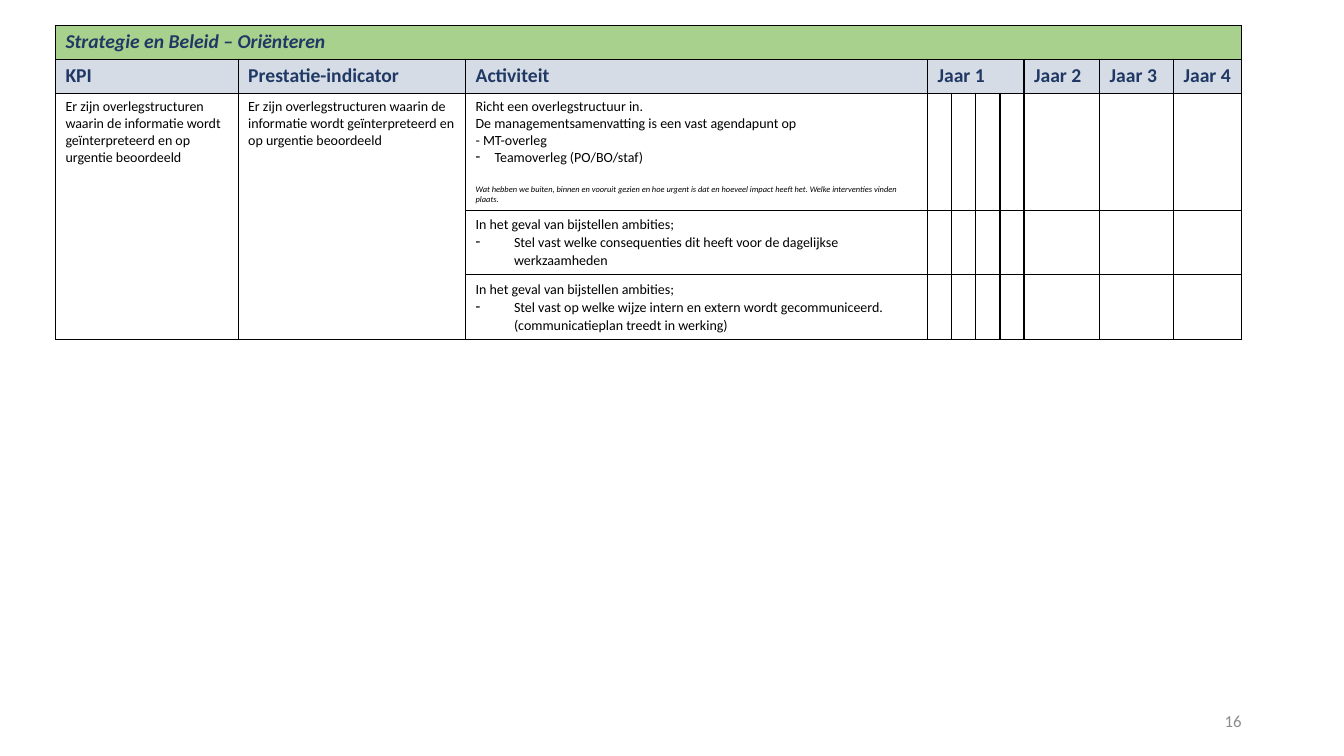
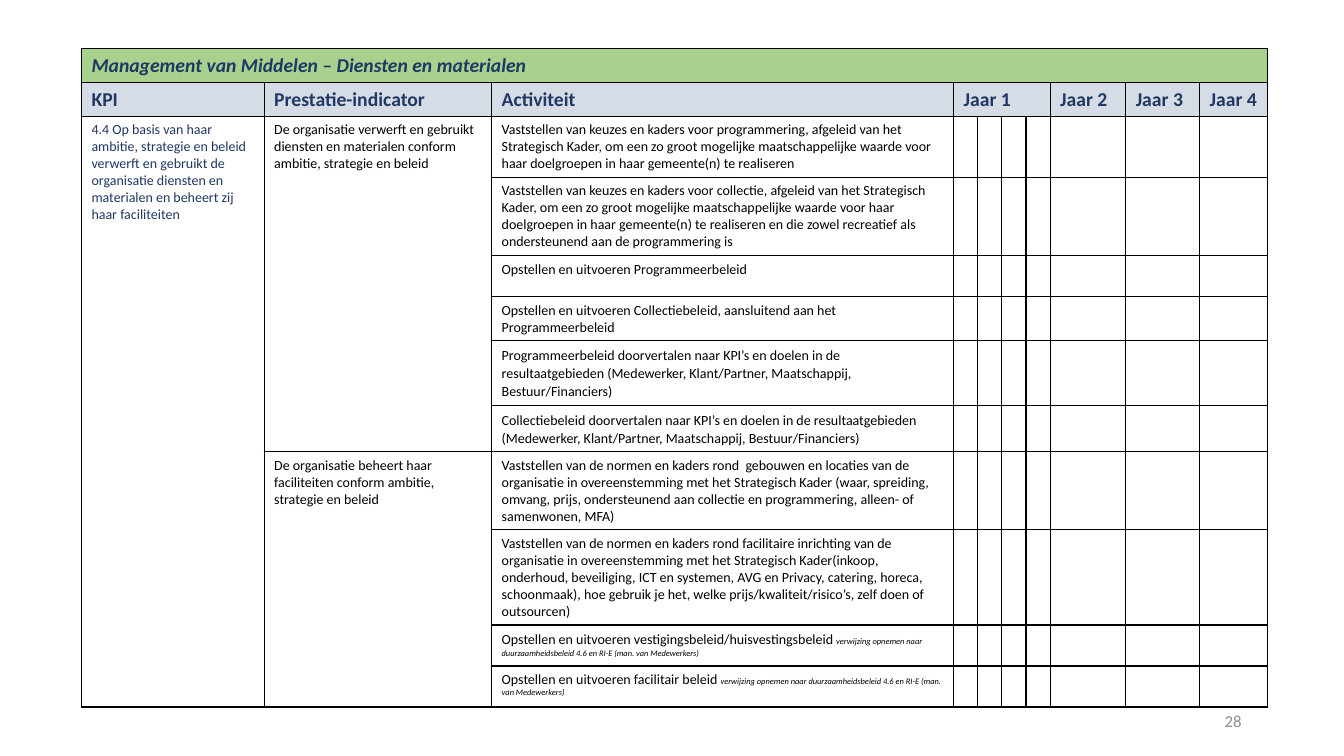
from dataclasses import dataclass

from lxml.etree import SubElement
from pptx import Presentation
from pptx.dml.color import RGBColor
from pptx.enum.text import MSO_ANCHOR as Anchor, PP_ALIGN as Align
from pptx.oxml import parse_xml
from pptx.oxml.ns import nsdecls, qn
from pptx.util import Pt


@dataclass(frozen=True)
class Theme:
    font: str = "Calibri"
    navy: str = "203864"
    black: str = "000000"
    gray: str = "8C8C8C"
    green: str = "A9D18E"
    pale_blue: str = "D6DCE5"
    heading_size: float = 14
    page_size: float = 12
    body_size: float = 10
    note_size: float = 6
    border_width: float = 1
    loose_spacing: float = 1.07


@dataclass(frozen=True)
class Line:
    text: str = ""
    note: str = ""
    indent: float = 0
    loose: bool = False
    before: float = 0


@dataclass(frozen=True)
class Activity:
    height: float
    lines: tuple[Line, ...]


@dataclass(frozen=True)
class Indicator:
    text: str
    activities: tuple[Activity, ...]


@dataclass(frozen=True)
class Plan:
    left: float
    top: float
    title: str
    kpi: str
    kpi_color: str
    indicators: tuple[Indicator, ...]
    page_number: int


THEME = Theme()
HEADER_HEIGHT = 24.3
QUARTERS = 4
COLUMN_WIDTHS = (130.5, 162.5, 330, *[17.2] * QUARTERS, 54, 52.8, 48.4)
HEADERS = {0: "KPI", 1: "Prestatie-indicator", 2: "Activiteit", 3: "Jaar 1",
           7: "Jaar 2", 8: "Jaar 3", 9: "Jaar 4"}


def activity(height: float, text: str, note: str = "", loose: bool = False) -> Activity:
    return Activity(height, (Line(text, note, loose=loose),))


def adjustment(task: str) -> Activity:
    return Activity(46.2, (
        Line("In het geval van bijstellen ambities;", loose=True),
        Line(task, indent=27.4, loose=True),
    ))


OVERLEG = "Er zijn overlegstructuren waarin de informatie wordt geïnterpreteerd en op urgentie beoordeeld"
VERWIJZING = "verwijzing opnemen naar duurzaamheidsbeleid 4.6 en RI-E (man. van Medewerkers)"
RESULTAATGEBIEDEN = (
    "doorvertalen naar KPI’s en doelen in de resultaatgebieden "
    "(Medewerker, Klant/Partner, Maatschappij, Bestuur/Financiers)"
)

PLANS = (
    Plan(39.6, 18, "Strategie en Beleid – Oriënteren", OVERLEG, THEME.black, (
        Indicator(OVERLEG, (
            Activity(83.6, (
                Line("Richt een overlegstructuur in."),
                Line("De managementsamenvatting is een vast agendapunt op"),
                Line("- MT-overleg"),
                Line("Teamoverleg (PO/BO/staf)", indent=13.5),
                Line(note="Wat hebben we buiten, binnen en vooruit gezien en hoe urgent is dat en "
                          "hoeveel impact heeft het. Welke interventies vinden plaats.",
                     loose=True, before=12.2),
            )),
            adjustment("Stel vast welke consequenties dit heeft voor de dagelijkse werkzaamheden"),
            adjustment("Stel vast op welke wijze intern en extern wordt gecommuniceerd. "
                       "(communicatieplan treedt in werking)"),
        )),
    ), 16),
    Plan(58.2, 34.6, "Management van Middelen – Diensten en materialen",
         "4.4 Op basis van haar ambitie, strategie en beleid verwerft en gebruikt de organisatie "
         "diensten en materialen en beheert zij haar faciliteiten", THEME.navy, (
        Indicator("De organisatie verwerft en gebruikt diensten en materialen conform ambitie, "
                  "strategie en beleid", (
            activity(43.7, "Vaststellen van keuzes en kaders voor programmering, afgeleid van het "
                     "Strategisch Kader, om een zo groot mogelijke maatschappelijke waarde voor "
                     "haar doelgroepen in haar gemeente(n) te realiseren"),
            activity(55.8, "Vaststellen van keuzes en kaders voor collectie, afgeleid van het "
                     "Strategisch Kader, om een zo groot mogelijke maatschappelijke waarde voor "
                     "haar doelgroepen in haar gemeente(n) te realiseren en die zowel recreatief "
                     "als ondersteunend aan de programmering is"),
            activity(29.3, "Opstellen en uitvoeren Programmeerbeleid"),
            activity(31.4, "Opstellen en uitvoeren Collectiebeleid, aansluitend aan het "
                     "Programmeerbeleid"),
            activity(46.4, f"Programmeerbeleid {RESULTAATGEBIEDEN}", loose=True),
            activity(33, f"Collectiebeleid {RESULTAATGEBIEDEN}", loose=True),
        )),
        Indicator("De organisatie beheert haar faciliteiten conform ambitie, strategie en beleid", (
            activity(55.8, "Vaststellen van de normen en kaders rond  gebouwen en locaties van de "
                     "organisatie in overeenstemming met het Strategisch Kader (waar, spreiding, "
                     "omvang, prijs, ondersteunend aan collectie en programmering, alleen- of "
                     "samenwonen, MFA)"),
            activity(67.9, "Vaststellen van de normen en kaders rond facilitaire inrichting van de "
                     "organisatie in overeenstemming met het Strategisch Kader(inkoop, onderhoud, "
                     "beveiliging, ICT en systemen, AVG en Privacy, catering, horeca, schoonmaak), "
                     "hoe gebruik je het, welke prijs/kwaliteit/risico’s, zelf doen of outsourcen)"),
            activity(29.3, "Opstellen en uitvoeren vestigingsbeleid/huisvestingsbeleid ",
                     VERWIJZING, loose=True),
            activity(29.3, "Opstellen en uitvoeren facilitair beleid ", VERWIJZING),
        )),
    ), 28),
)


def write_text(paragraph, text: str, *, size: float = THEME.body_size, color: str = THEME.black,
               bold: bool = False, italic: bool = False) -> None:
    run = paragraph.add_run()
    run.text = text
    run.font.name = THEME.font
    run.font.size = Pt(size)
    run.font.color.rgb = RGBColor.from_string(color)
    run.font.bold = bold
    run.font.italic = italic


def write_heading(cell, text: str, fill: str, italic: bool = False) -> None:
    cell.fill.solid()
    cell.fill.fore_color.rgb = RGBColor.from_string(fill)
    write_text(cell.text_frame.paragraphs[0], text, size=THEME.heading_size,
               color=THEME.navy, bold=True, italic=italic)


def write_lines(cell, lines: tuple[Line, ...]) -> None:
    frame = cell.text_frame
    for index, line in enumerate(lines):
        paragraph = frame.add_paragraph() if index else frame.paragraphs[0]
        if line.loose:
            paragraph.line_spacing = THEME.loose_spacing
        if line.before:
            paragraph.space_before = Pt(line.before)
        if line.indent:
            add_dash(paragraph, line.indent)
        if line.text:
            write_text(paragraph, line.text)
        if line.note:
            write_text(paragraph, line.note, size=THEME.note_size, italic=True)


def add_dash(paragraph, indent: float) -> None:
    properties = paragraph._p.get_or_add_pPr()
    properties.set("marL", str(Pt(indent)))
    properties.set("indent", str(-Pt(indent)))
    SubElement(properties, qn("a:buChar")).set("char", "-")


def add_borders(cell) -> None:
    properties = cell._tc.get_or_add_tcPr()
    for position, side in enumerate(("lnL", "lnR", "lnT", "lnB")):
        properties.insert(position, parse_xml(
            f'<a:{side} {nsdecls("a")} w="{Pt(THEME.border_width)}"><a:solidFill>'
            f'<a:srgbClr val="{THEME.black}"/></a:solidFill></a:{side}>'))


def add_plan_table(slide, plan: Plan) -> None:
    activities = [item for indicator in plan.indicators for item in indicator.activities]
    heights = [HEADER_HEIGHT, HEADER_HEIGHT, *(item.height for item in activities)]
    table = slide.shapes.add_table(
        len(heights), len(COLUMN_WIDTHS), Pt(plan.left), Pt(plan.top),
        Pt(sum(COLUMN_WIDTHS)), Pt(sum(heights))).table
    table.first_row = table.horz_banding = False
    for column, width in zip(table.columns, COLUMN_WIDTHS):
        column.width = Pt(width)
    for row, height in zip(table.rows, heights):
        row.height = Pt(height)
    for cell in table.iter_cells():
        cell.fill.background()
        add_borders(cell)

    last_row, last_column = len(heights) - 1, len(COLUMN_WIDTHS) - 1
    table.cell(0, 0).merge(table.cell(0, last_column))
    write_heading(table.cell(0, 0), plan.title, THEME.green, italic=True)
    table.cell(1, 3).merge(table.cell(1, 2 + QUARTERS))
    for column, label in HEADERS.items():
        write_heading(table.cell(1, column), label, THEME.pale_blue)

    table.cell(2, 0).merge(table.cell(last_row, 0))
    write_text(table.cell(2, 0).text_frame.paragraphs[0], plan.kpi, color=plan.kpi_color)
    first = 2
    for indicator in plan.indicators:
        following = first + len(indicator.activities)
        table.cell(first, 1).merge(table.cell(following - 1, 1))
        write_text(table.cell(first, 1).text_frame.paragraphs[0], indicator.text)
        first = following
    for row, item in enumerate(activities, start=2):
        write_lines(table.cell(row, 2), item.lines)


def add_page_number(slide, number: int) -> None:
    frame = slide.shapes.add_textbox(Pt(678), Pt(500.5), Pt(216), Pt(28.8)).text_frame
    frame.word_wrap = True
    frame.vertical_anchor = Anchor.MIDDLE
    paragraph = frame.paragraphs[0]
    paragraph.alignment = Align.RIGHT
    write_text(paragraph, str(number), size=THEME.page_size, color=THEME.gray)


def main() -> None:
    presentation = Presentation()
    presentation.slide_width, presentation.slide_height = Pt(960), Pt(540)
    for plan in PLANS:
        slide = presentation.slides.add_slide(presentation.slide_layouts[6])
        add_plan_table(slide, plan)
        add_page_number(slide, plan.page_number)
    presentation.save("out.pptx")


if __name__ == "__main__":
    main()
